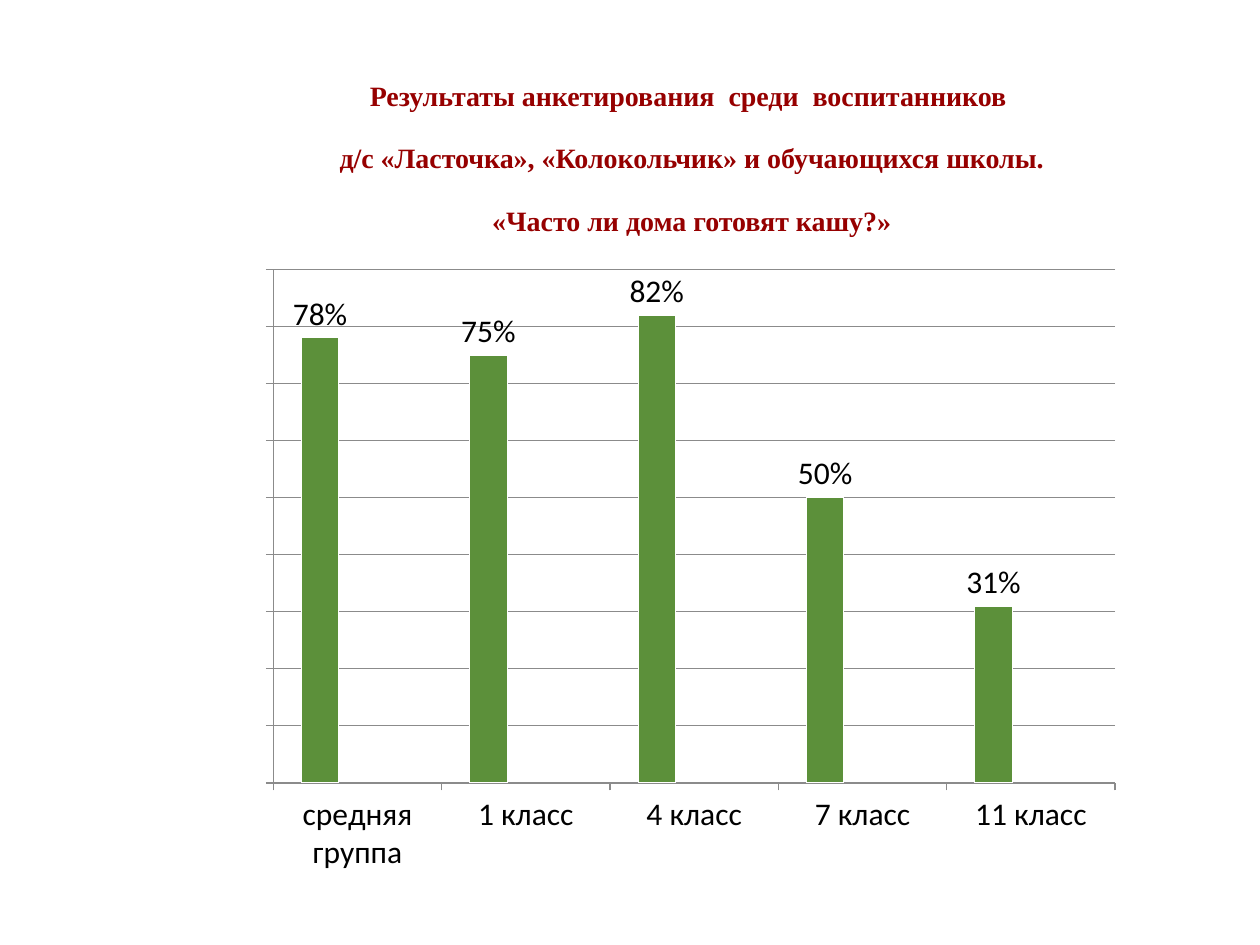
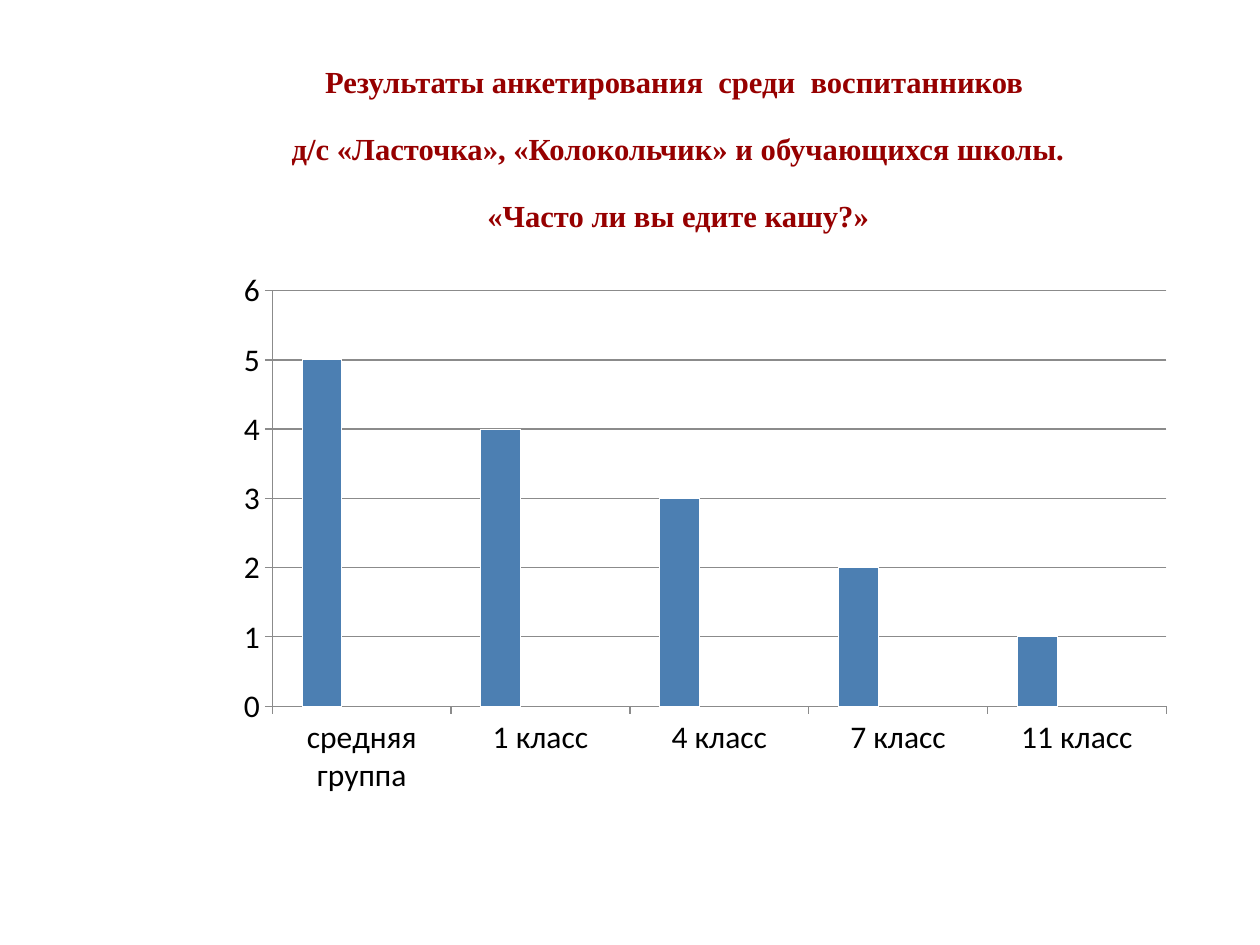
from lxml import etree
from pptx import Presentation, util as u
from pptx.chart.data import CategoryChartData
from pptx.dml.color import RGBColor
from pptx.enum import chart as ch, text
from pptx.oxml.ns import qn

RED = RGBColor(0x96, 0x00, 0x00)
GREEN = RGBColor(0x5C, 0x90, 0x3A)
BLUE = RGBColor(0x4C, 0x7F, 0xB2)
GREY = RGBColor(0x8B, 0x8B, 0x8B)
BLACK = RGBColor(0, 0, 0)
WHITE = RGBColor(255, 255, 255)

WIDE, HIGH = u.Inches(10), u.Inches(7.5)
LEAD = ("Результаты анкетирования  среди  воспитанников ",
        "д/с «Ласточка», «Колокольчик» и обучающихся школы.")
GROUPS = ("средняя группа", "1 класс", "4 класс", "7 класс", "11 класс")
HEAD = dict(name="Times New Roman", bold=True)
BODY = dict(name="Calibri", size=u.Pt(18))
LINES = dict(line_spacing=1.3, alignment=text.PP_ALIGN.CENTER)

POLLS = (
    dict(ask="«Часто ли дома готовят кашу?»", size=16,
         head=(1.57, 0.49, 7.79, 1.49), area=(2.03, 2.04, 6.96, 4.97),
         plot=(0.02, 0.02, 0.96, 0.82), vals=(0.78, 0.75, 0.82, 0.5, 0.31),
         tint=GREEN, top=0.9, step=0.1, share=True),
    dict(ask="«Часто ли вы едите кашу?»", size=17.5,
         head=(1.26, 0.36, 8.2, 1.58), area=(1.78, 2.09, 7.63, 4.34),
         plot=(0.05, 0.05, 0.93, 0.76), vals=(5, 4, 3, 2, 1),
         tint=BLUE, top=6, step=1, share=False),
)


def style(item, **vals):
    """Set each named format value on the item."""
    for key, val in vals.items():
        setattr(item, key, val)


def paint(font, tone, **vals):
    """Set the colour and other values of a font."""
    style(font, **vals)
    font.color.rgb = tone


def title(slide, box, ask, size):
    """Write the shared heading and the question inside the box."""
    frame = slide.shapes.add_textbox(*map(u.Inches, box)).text_frame
    style(frame, word_wrap=True, vertical_anchor=text.MSO_ANCHOR.TOP)
    for row, line in enumerate((*LEAD, ask)):
        para = frame.add_paragraph() if row else frame.paragraphs[0]
        style(para, **LINES)
        if row:
            para.space_before = u.Pt(11)
        para._p.get_or_add_pPr().set("marL", str(u.Inches(0.05)))
        run = para.add_run()
        run.text = line
        paint(run.font, RED, size=u.Pt(size), **HEAD)


def place(chart, plot):
    """Fix the inner plot area as shares of the chart."""
    area = chart._chartSpace.chart.plotArea
    for old in area.findall(qn("c:layout")):
        area.remove(old)
    outer = etree.Element(qn("c:layout"))
    inner = etree.SubElement(outer, qn("c:manualLayout"))
    pairs = [("layoutTarget", "inner"), ("xMode", "edge"), ("yMode", "edge")]
    pairs += zip("xywh", plot)
    for tag, val in pairs:
        etree.SubElement(inner, qn("c:" + tag)).set("val", str(val))
    area.insert(0, outer)


def axes(chart, top, step, share):
    """Format both axes and the grid."""
    side = chart.value_axis
    style(side, minimum_scale=0, maximum_scale=top, major_unit=step,
          has_major_gridlines=True)
    if share:
        side.tick_label_position = ch.XL_TICK_LABEL_POSITION.NONE
    style(side.tick_labels, number_format="0%" if share else "General",
          number_format_is_linked=False)
    for axis in (side, chart.category_axis):
        style(axis, major_tick_mark=ch.XL_TICK_MARK.OUTSIDE,
              minor_tick_mark=ch.XL_TICK_MARK.NONE)
    for item in (side, chart.category_axis, side.major_gridlines):
        item.format.line.color.rgb = GREY
        item.format.line.width = u.Pt(0.75)


def bars(slide, box, plot, vals, tint, top, step, share):
    """Draw the column chart of answers inside the box."""
    data = CategoryChartData()
    data.categories = GROUPS
    blank = (None,) * len(GROUPS)
    for num, row in enumerate((vals, blank, blank), 1):
        data.add_series(f"Series {num}", row)
    chart = slide.shapes.add_chart(
        ch.XL_CHART_TYPE.COLUMN_CLUSTERED, *map(u.Inches, box), data).chart
    style(chart, has_legend=False, has_title=False)
    paint(chart.font, BLACK, **BODY)
    style(chart.plots[0], gap_width=150, overlap=0, vary_by_categories=False)
    first = chart.plots[0].series[0]
    first.format.fill.solid()
    first.format.fill.fore_color.rgb = tint
    first.format.line.color.rgb = WHITE
    if share:
        tags = first.data_labels
        style(tags, show_value=True, number_format="0%",
              number_format_is_linked=False,
              position=ch.XL_LABEL_POSITION.OUTSIDE_END)
        paint(tags.font, BLACK, **BODY)
    axes(chart, top, step, share)
    place(chart, plot)


def poll(deck, ask, size, head, area, **rest):
    """Add one slide with a question and its chart."""
    slide = deck.slides.add_slide(deck.slide_layouts[6])
    title(slide, head, ask, size)
    bars(slide, area, **rest)


def main():
    """Build and save the deck."""
    deck = Presentation()
    style(deck, slide_width=WIDE, slide_height=HIGH)
    for item in POLLS:
        poll(deck, **item)
    deck.save("out.pptx")


if __name__ == "__main__":
    main()
